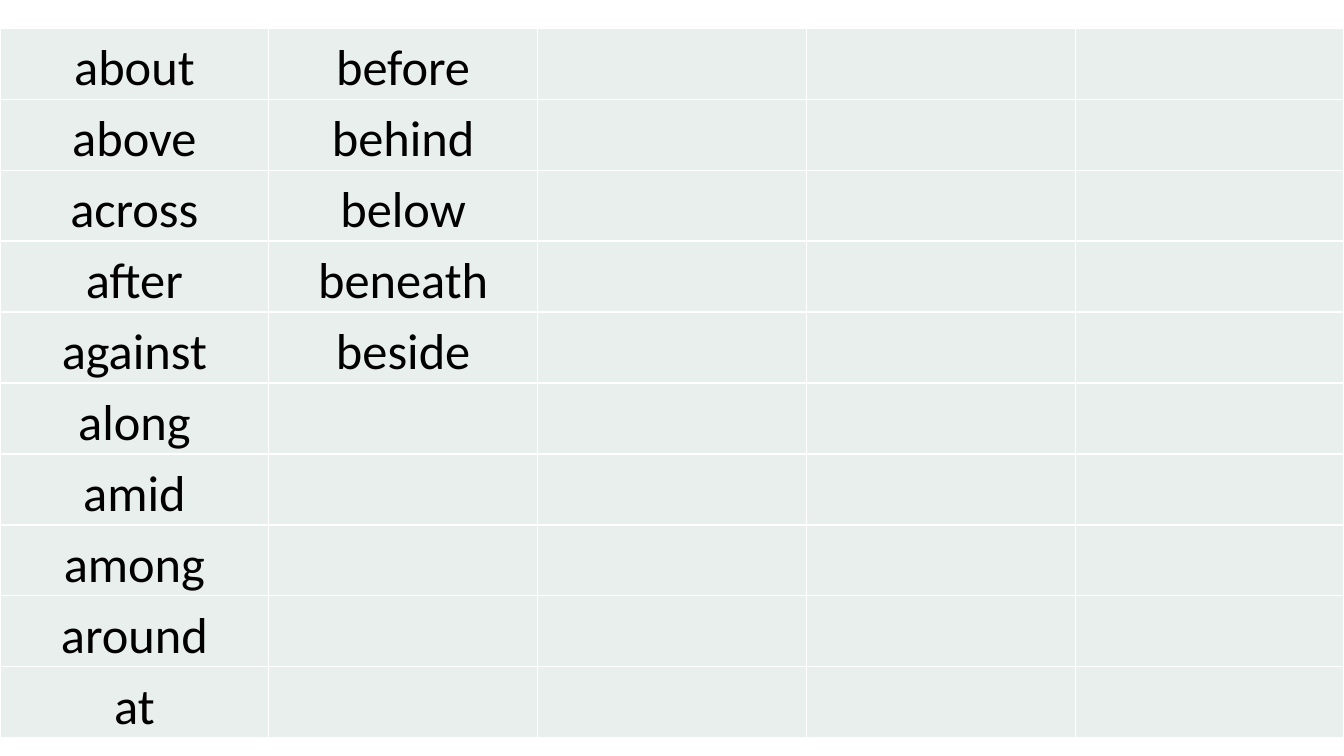
from dataclasses import dataclass

from lxml.etree import SubElement
from pptx import Presentation
from pptx.dml.color import RGBColor as Rgb
from pptx.enum.text import PP_ALIGN as Align
from pptx.oxml.ns import qn
from pptx.util import Inches, Pt


@dataclass(frozen=True)
class Theme:
    font: str = "Calibri"
    size: int = 36
    ink: str = "000000"
    fill: str = "E8EFEC"
    rule: str = "FFFFFF"
    width: float = 1


WORDS = [
    ["about", "above", "across", "after", "against",
     "along", "amid", "among", "around", "at"],
    ["before", "behind", "below", "beneath", "beside"],
    [],
    [],
    [],
]


def put_text(frame, text, *, font, size, color, align=Align.CENTER, space=1.15):
    para = frame.paragraphs[0]
    para.alignment = align
    para.line_spacing = space
    run = para.add_run()
    run.text = text
    run.font.name = font
    run.font.size = Pt(size)
    run.font.color.rgb = Rgb.from_string(color)


class Deck:
    def __init__(self, theme, slide):
        self.theme = theme
        self.slide = slide

    def border(self, cell):
        props = cell._tc.get_or_add_tcPr()
        for side in ("a:lnL", "a:lnR", "a:lnT", "a:lnB"):
            line = SubElement(props, qn(side), w=str(Pt(self.theme.width)))
            paint = SubElement(line, qn("a:solidFill"))
            SubElement(paint, qn("a:srgbClr"), val=self.theme.rule)

    def cell(self, cell, word):
        look = self.theme
        self.border(cell)
        cell.fill.solid()
        cell.fill.fore_color.rgb = Rgb.from_string(look.fill)
        if word:
            cell.margin_left = cell.margin_right = Inches(0.07)
            cell.margin_top = cell.margin_bottom = 0
            put_text(cell.text_frame, word, font=look.font,
                     size=look.size, color=look.ink)

    def table(self, words, left, top, width, height):
        count = max(len(group) for group in words)
        grid = self.slide.shapes.add_table(
            count, len(words), Inches(left), Inches(top),
            Inches(width), Inches(height)).table
        grid.first_row = False
        grid.horz_banding = False
        for col, group in enumerate(words):
            for row in range(count):
                word = group[row] if row < len(group) else ""
                self.cell(grid.cell(row, col), word)


def main():
    show = Presentation()
    show.slide_width = Inches(13.33)
    show.slide_height = Inches(7.5)
    slide = show.slides.add_slide(show.slide_layouts[6])
    deck = Deck(Theme(), slide)
    deck.table(WORDS, 0, 0.28, 13.33, 6.98)
    show.save("out.pptx")


if __name__ == "__main__":
    main()
